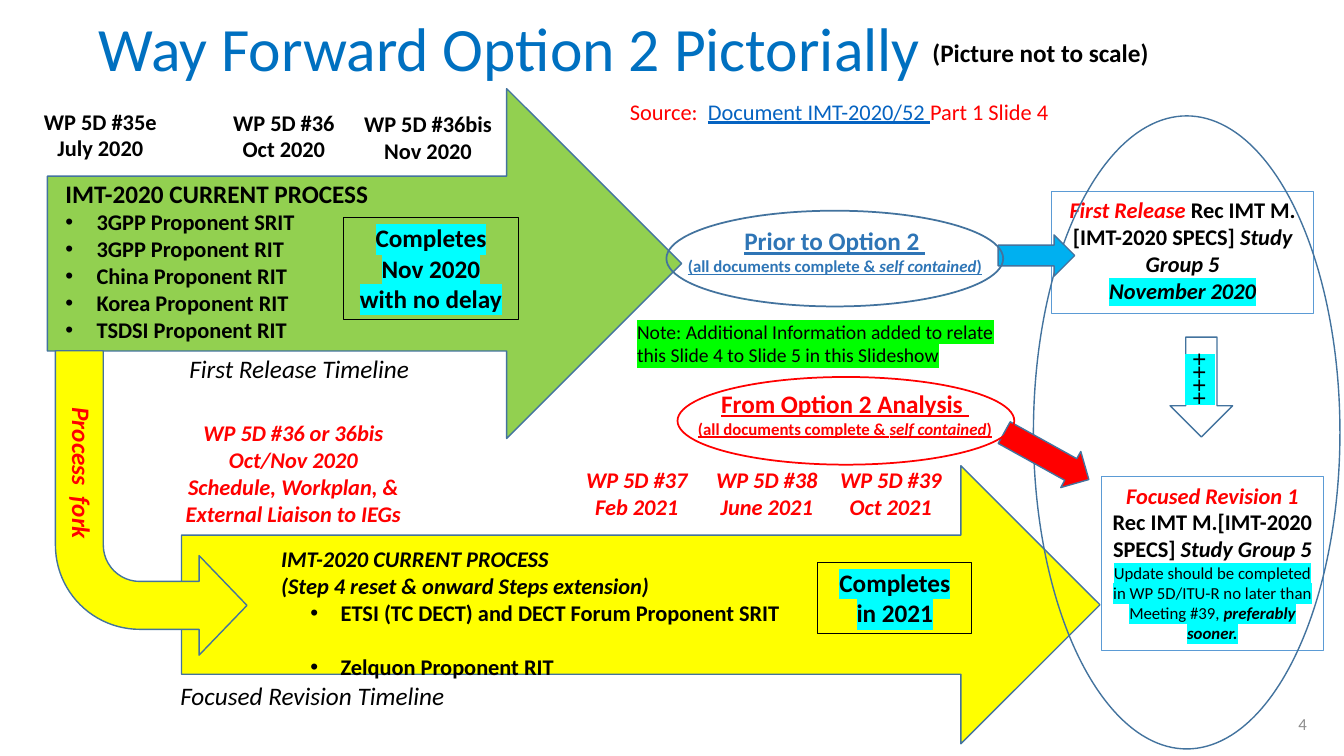
from lxml import etree
from pptx import Presentation
from pptx.dml.color import RGBColor
from pptx.enum.shapes import MSO_SHAPE
from pptx.enum.text import MSO_ANCHOR, PP_ALIGN
from pptx.oxml.ns import qn
from pptx.util import Emu, Pt

PX = 9144
SLIDE_SIZE = (1333, 750)
FONT = "Calibri"
RECTANGLE, ELLIPSE = MSO_SHAPE.RECTANGLE, MSO_SHAPE.OVAL
ARROW, BENT_ARROW = MSO_SHAPE.RIGHT_ARROW, MSO_SHAPE.BENT_ARROW
LEFT, CENTER, RIGHT = PP_ALIGN.LEFT, PP_ALIGN.CENTER, PP_ALIGN.RIGHT
TOP, MIDDLE = MSO_ANCHOR.TOP, MSO_ANCHOR.MIDDLE

BLACK = RGBColor(0x00, 0x00, 0x00)
RED = RGBColor(0xFF, 0x00, 0x00)
GREEN = RGBColor(0x92, 0xD0, 0x50)
YELLOW = RGBColor(0xFF, 0xFF, 0x00)
SKY = RGBColor(0x00, 0xB0, 0xF0)
TITLE_BLUE = RGBColor(0x00, 0x70, 0xC0)
OPTION_BLUE = RGBColor(0x2E, 0x75, 0xB6)
LINK_BLUE = RGBColor(0x05, 0x63, 0xC1)
BOX_BLUE = RGBColor(0x5B, 0x9B, 0xD5)
OUTLINE = RGBColor(0x43, 0x73, 0x9E)
GRAY = RGBColor(0x8C, 0x8C, 0x8C)
CYAN = RGBColor(0x00, 0xFF, 0xFF)
LIME = RGBColor(0x00, 0xFF, 0x00)


def style(size, color=BLACK, flags="", mark=None):
    return {"size": Pt(size), "color": color, "mark": mark, "bold": "b" in flags,
            "italic": "i" in flags, "underline": "u" in flags}


HEADING = style(18, flags="b")
BODY = style(16, flags="b")
BODY_ITALIC = style(16, flags="bi")
RED_ITALIC = style(16, RED, "bi")
TIMELINE = style(18, flags="i")
DONE = style(18, flags="b", mark=CYAN)
SOURCE = style(16, RED)

PROCESS_ARROWS = [
    ((47, 88, 629, 347), ARROW, GREEN, {}),
    ((180, 462, 911, 276), ARROW, YELLOW, {}),
    ((55, 348, 190, 302), BENT_ARROW, YELLOW,
     {"adjust": (0.25, 0.26, 0.25, 0.44), "flip": True}),
]
LINKS_AND_RINGS = [
    ((1025, 115, 304, 628), ELLIPSE, None, {}),
    ((990, 233, 76, 41), ARROW, SKY, {}),
    ((990, 432, 96, 41), ARROW, RED, {"adjust": (0.6, 0.5), "turn": 29}),
    ((661, 209, 334, 95), ELLIPSE, None, {"weight": 1.25}),
    ((672, 374, 334, 87), ELLIPSE, None, {"weight": 1.25, "line": RED}),
]

MEETINGS = [
    ((22, 102, 155, 64), "WP 5D #35e", "July 2020", BODY),
    ((204, 103, 155, 64), "WP 5D #36", "Oct 2020", BODY),
    ((342, 104, 165, 64), "WP 5D #36bis", "Nov 2020", BODY),
    ((554, 458, 155, 64), "WP 5D #37", "Feb 2021", RED_ITALIC),
    ((683, 458, 155, 64), "WP 5D #38", "June 2021", RED_ITALIC),
    ((806, 458, 155, 64), "WP 5D #39", "Oct 2021", RED_ITALIC),
]
OPTIONS = [
    ((670, 219, 316, 61), "Prior to Option 2 ", OPTION_BLUE),
    ((680, 380, 316, 61), "From Option 2 Analysis ", RED),
]
PROPONENTS = ["3GPP Proponent SRIT", "3GPP Proponent RIT", "China Proponent RIT",
              "Korea Proponent RIT", "TSDSI Proponent RIT"]
REVISION_PROPONENTS = ["ETSI (TC DECT) and DECT Forum Proponent SRIT", "Zelquon Proponent RIT"]

TEXTS = [
    ((88, 7, 1150, 89), [[("Way Forward Option 2 Pictorially", style(44, TITLE_BLUE))]],
     {"anchor": MIDDLE, "spacing": 0.9}),
    ((915, 32, 236, 40), [[("(Picture not to scale)", HEADING)]], {"wrap": False}),
    ((615, 92, 447, 37), [[("Source:  ", SOURCE),
                           ("Document IMT-2020/52 ", style(16, LINK_BLUE, "u")),
                           ("Part 1 Slide 4", SOURCE)]], {"wrap": False}),
    ((55, 172, 508, 175), [[("IMT-2020 CURRENT PROCESS", HEADING)]]
     + [[(name, BODY)] for name in PROPONENTS],
     {"bullets": {"first": 1, "left": 31, "hang": 31, "gap": 0}}),
    ((269, 536, 519, 118), [[("IMT-2020 CURRENT PROCESS", BODY_ITALIC)],
                            [("(Step 4 reset & onward Steps extension)", BODY_ITALIC)]]
     + [[(name, BODY)] for name in REVISION_PROPONENTS],
     {"bullets": {"first": 2, "left": 59, "hang": 30, "gap": 19.5}}),
    ((6, 450, 151, 40), [[("Process  fork", style(18, RED, "bi"))]], {"turn": 90}),
    ((166, 411, 250, 118), [[("WP 5D #36 or 36bis", RED_ITALIC)], [("Oct/Nov 2020", RED_ITALIC)],
                            [("Schedule, Workplan, & External Liaison to IEGs", RED_ITALIC)]],
     {"align": CENTER}),
    ((178, 346, 250, 40), [[("First Release Timeline", TIMELINE)]], {}),
    ((169, 670, 304, 40), [[("Focused Revision Timeline", TIMELINE)]], {}),
    ((622, 312, 397, 57), [[("Note: Additional Information added to relate this Slide 4 "
                             "to Slide 5 in this Slideshow", style(14, mark=LIME))]], {}),
    ((1043, 190, 260, 121), [[("First Release ", RED_ITALIC), ("Rec IMT M.[IMT-2020 SPECS] ", BODY),
                              ("Study Group 5", BODY_ITALIC)],
                             [("November 2020", style(16, flags="bi", mark=CYAN))]],
     {"align": CENTER, "border": BOX_BLUE}),
    ((1092, 473, 221, 172), [[("Focused Revision 1 ", RED_ITALIC),
                              ("Rec IMT M.[IMT-2020 SPECS] ", BODY),
                              ("Study Group 5", BODY_ITALIC)],
                             [("Update should be completed in WP 5D/ITU-R no later than "
                               "Meeting #39, ", style(12, mark=CYAN)),
                              ("preferably sooner.", style(12, flags="bi", mark=CYAN))]],
     {"align": CENTER, "border": BOX_BLUE}),
    ((341, 216, 173, 101), [[("Completes Nov 2020", DONE)], [("with no delay", DONE)]],
     {"align": CENTER, "border": BLACK}),
    ((811, 558, 153, 71), [[("Completes in 2021", DONE)]], {"align": CENTER, "border": BLACK}),
    ((1142, 353, 99, 62), [[("++++", style(18, mark=CYAN))]],
     {"align": CENTER, "border": OUTLINE, "kind": ARROW, "weight": 1, "turn": 90,
      "anchor": MIDDLE}),
    ((1006, 698, 300, 40), [[("4", style(12, GRAY))]], {"align": RIGHT, "anchor": MIDDLE}),
]
TEXTS += [(place, [[(name, look)], [(date, look)]], {"align": CENTER})
          for place, name, date, look in MEETINGS]
TEXTS += [(place, [[(name, style(18, color, "bu"))],
                   [("(all documents complete & ", style(12, color, "bu")),
                    ("self contained", style(12, color, "biu")),
                    (")", style(12, color, "bu"))]], {"align": CENTER, "wrap": False})
          for place, name, color in OPTIONS]


def scaled(place):
    return [Emu(value * PX) for value in place]


def add_outline(slide, place, kind, fill, line=OUTLINE, weight=1, adjust=(), turn=0, flip=False):
    shape = slide.shapes.add_shape(kind, *scaled(place))
    shape.shadow.inherit = False
    if fill is None:
        shape.fill.background()
    else:
        shape.fill.solid()
        shape.fill.fore_color.rgb = fill
    shape.line.color.rgb = line
    shape.line.width = Pt(weight)
    for index, value in enumerate(adjust):
        shape.adjustments[index] = value
    shape.rotation = turn
    if flip:
        shape._element.spPr.xfrm.set("flipV", "1")
    return shape


def add_run(paragraph, text, look):
    run = paragraph.add_run()
    run.text = text
    run.font.name = FONT
    run.font.color.rgb = look["color"]
    for name in ("size", "bold", "italic", "underline"):
        setattr(run.font, name, look[name])
    if look["mark"] is not None:
        highlight = etree.Element(qn("a:highlight"))
        etree.SubElement(highlight, qn("a:srgbClr"), val=str(look["mark"]))
        run._r.get_or_add_rPr().find(qn("a:solidFill")).addnext(highlight)


def add_bullet(paragraph, left, hang):
    properties = paragraph._p.get_or_add_pPr()
    properties.set("marL", str(left * PX))
    properties.set("indent", str(-hang * PX))
    etree.SubElement(properties, qn("a:buFont"), typeface="Arial")
    etree.SubElement(properties, qn("a:buChar"), char="•")


def add_text(slide, place, paragraphs, align=LEFT, anchor=TOP, wrap=True, spacing=None,
             turn=0, border=None, kind=RECTANGLE, weight=0.75, bullets=None):
    if border is None:
        shape = slide.shapes.add_textbox(*scaled(place))
        shape.rotation = turn
    else:
        shape = add_outline(slide, place, kind, None, border, weight, turn=turn)
    frame = shape.text_frame
    frame.word_wrap = wrap
    frame.vertical_anchor = anchor
    for index, runs in enumerate(paragraphs):
        paragraph = frame.add_paragraph() if index else frame.paragraphs[0]
        paragraph.alignment = align
        if spacing:
            paragraph.line_spacing = spacing
        if bullets and index >= bullets["first"]:
            if index > bullets["first"]:
                paragraph.space_before = Pt(bullets["gap"])
            add_bullet(paragraph, bullets["left"], bullets["hang"])
        for text, look in runs:
            add_run(paragraph, text, look)


def main():
    presentation = Presentation()
    presentation.slide_width, presentation.slide_height = scaled(SLIDE_SIZE)
    slide = presentation.slides.add_slide(presentation.slide_layouts[6])
    for place, kind, fill, options in PROCESS_ARROWS:
        add_outline(slide, place, kind, fill, **options)
    for place, paragraphs, options in TEXTS:
        add_text(slide, place, paragraphs, **options)
    for place, kind, fill, options in LINKS_AND_RINGS:
        add_outline(slide, place, kind, fill, **options)
    presentation.save("out.pptx")


if __name__ == "__main__":
    main()
